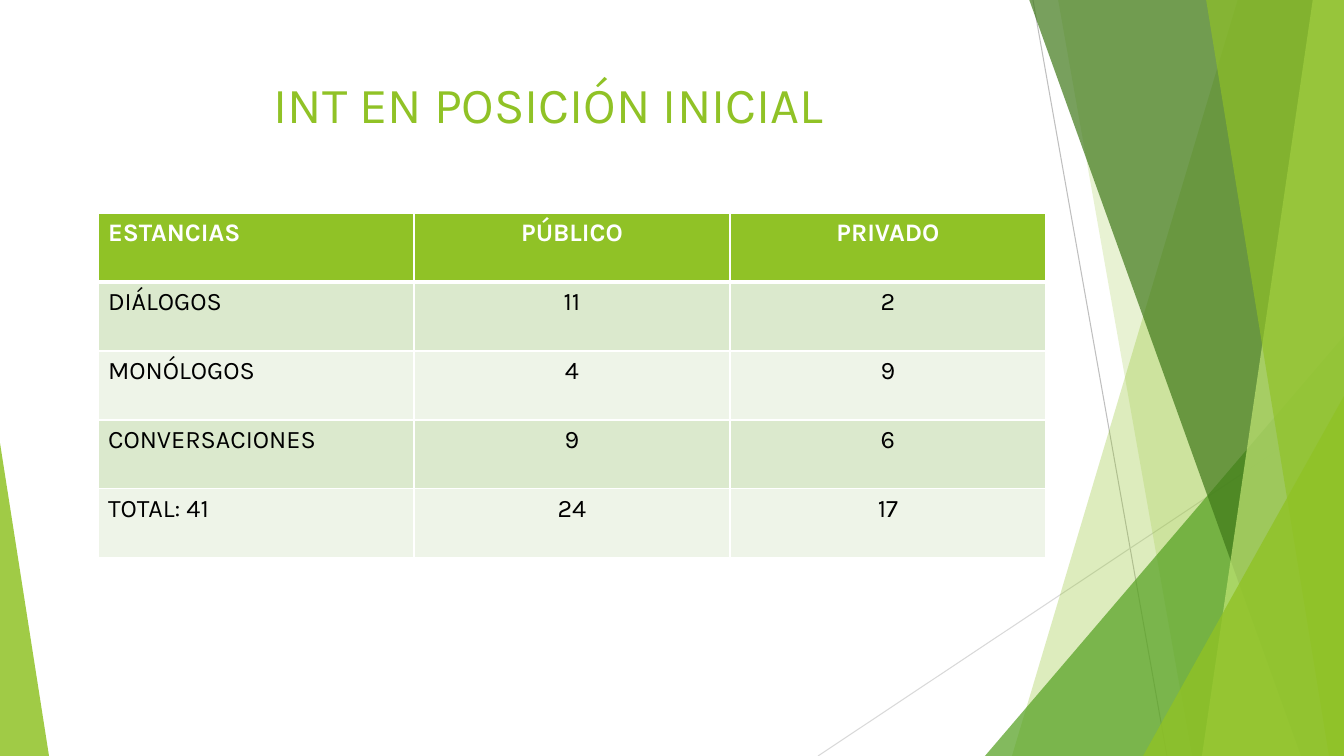
"""Build a slide with a table of initial positions beside green facets."""
from lxml.etree import SubElement
from pptx import Presentation
from pptx.dml.color import RGBColor
from pptx.enum.shapes import MSO_CONNECTOR, MSO_SHAPE
from pptx.enum.text import MSO_ANCHOR, MSO_AUTO_SIZE, PP_ALIGN
from pptx.oxml.ns import qn
from pptx.util import Emu, Pt

GREEN = "90C226"
WHITE = "FFFFFF"
BLACK = "000000"
BANDS = ["DBE9CD", "EEF4E8"]
TOP, RIGHT, BOTTOM = -1, 1344, 756

LINES = [
    ((1033, 0), (1167, 756), "BFBFBF"),
    ((1344, 406), (818, 756), "D9D9D9"),
]
BACK_FACETS = [(1238, 1012, GREEN, 30), (1058, 1192, GREEN, 20)]
FRONT_FACETS = [
    (1029, 1301, "3F7819", 70),
    (1313, 1202, "C0E474", 70),
    (1206, 1329, GREEN, 65),
]
ROWS = [
    ("ESTANCIAS", "PÚBLICO", "PRIVADO"),
    ("DIÁLOGOS", "11", "2"),
    ("MONÓLOGOS", "4", "9"),
    ("CONVERSACIONES", "9", "6"),
    ("TOTAL: 41", "24", "17"),
]


def px(length):
    return Emu(round(length * 914400 / 100.8))


def color(value):
    return RGBColor.from_string(value)


class SlideBuilder:
    font_name = "Karla"

    def __init__(self, presentation):
        self.slide = presentation.slides.add_slide(presentation.slide_layouts[5])
        self.shapes = self.slide.shapes

    def format_text(self, paragraph, size, font_color, bold, alignment):
        paragraph.alignment = alignment
        font = paragraph.font
        font.name = self.font_name
        font.size = Pt(size)
        font.bold = bold
        font.color.rgb = color(font_color)

    def line(self, start, end, line_color):
        connector = self.shapes.add_connector(
            MSO_CONNECTOR.STRAIGHT, *map(px, start + end))
        connector.line.color.rgb = color(line_color)
        connector.line.width = Pt(0.75)
        SubElement(connector._element.spPr, qn("a:effectLst"))

    def paint(self, shape, fill_color, opacity):
        shape.shadow.inherit = False
        shape.fill.solid()
        shape.fill.fore_color.rgb = color(fill_color)
        shape.line.fill.background()
        fill = shape._element.spPr.find(qn("a:solidFill"))
        SubElement(fill[0], qn("a:alpha"), val=str(opacity * 1000))

    def facet(self, top_x, bottom_x, fill_color, opacity):
        builder = self.shapes.build_freeform(px(top_x), px(TOP))
        corners = [(RIGHT, TOP), (RIGHT, BOTTOM), (bottom_x, BOTTOM)]
        builder.add_line_segments([(px(x), px(y)) for x, y in corners])
        self.paint(builder.convert_to_shape(), fill_color, opacity)

    def triangle(self, left, top, width, apex, fill_color, opacity):
        shape = self.shapes.add_shape(
            MSO_SHAPE.ISOSCELES_TRIANGLE,
            *map(px, (left, top, width, BOTTOM - top)))
        shape.adjustments[0] = apex
        self.paint(shape, fill_color, opacity)

    def title(self, text, left, top, width, height):
        title = self.shapes.title
        title.left, title.top, title.width, title.height = map(
            px, (left, top, width, height))
        frame = title.text_frame
        frame.text = text
        frame.word_wrap = True
        frame.auto_size = MSO_AUTO_SIZE.NONE
        frame.vertical_anchor = MSO_ANCHOR.TOP
        self.format_text(frame.paragraphs[0], 36, GREEN, False, PP_ALIGN.CENTER)
        title._element.getparent().append(title._element)

    def border(self, cell, side, width):
        properties = cell._tc.get_or_add_tcPr()
        edge = SubElement(properties, qn(f"a:ln{side}"), w=str(Pt(width)))
        fill = SubElement(edge, qn("a:solidFill"))
        SubElement(fill, qn("a:srgbClr"), val=WHITE)

    def cell(self, cell, text, row, column):
        header = row == 0
        widths = {"L": 1, "R": 1, "T": 3 if row == 1 else 1, "B": 3 if header else 1}
        for side, width in widths.items():
            self.border(cell, side, width)
        cell.fill.solid()
        cell.fill.fore_color.rgb = color(GREEN if header else BANDS[(row - 1) % 2])
        cell.text = text
        self.format_text(
            cell.text_frame.paragraphs[0], 18, WHITE if header else BLACK, header,
            PP_ALIGN.CENTER if column else PP_ALIGN.LEFT)

    def table(self, rows, left, top, column_width, row_height):
        count = len(rows[0])
        table = self.shapes.add_table(
            len(rows), count, px(left), px(top),
            px(column_width * count), px(row_height * len(rows))).table
        table.horz_banding = False
        for row, texts in enumerate(rows):
            for column, text in enumerate(texts):
                self.cell(table.cell(row, column), text, row, column)


def main():
    presentation = Presentation()
    presentation.slide_width = px(RIGHT)
    presentation.slide_height = px(BOTTOM)
    builder = SlideBuilder(presentation)
    for line in LINES:
        builder.line(*line)
    for facet in BACK_FACETS:
        builder.facet(*facet)
    builder.triangle(985, 336, 359, 1, "54A021", 72)
    for facet in FRONT_FACETS:
        builder.facet(*facet)
    builder.triangle(1143, 396, 201, 1, GREEN, 80)
    builder.triangle(0, 443, 49, 0, GREEN, 85)
    builder.title("INT EN POSICIÓN INICIAL", 75, 68, 947, 145)
    builder.table(ROWS, 98, 213, 316, 69)
    presentation.save("out.pptx")


if __name__ == "__main__":
    main()
